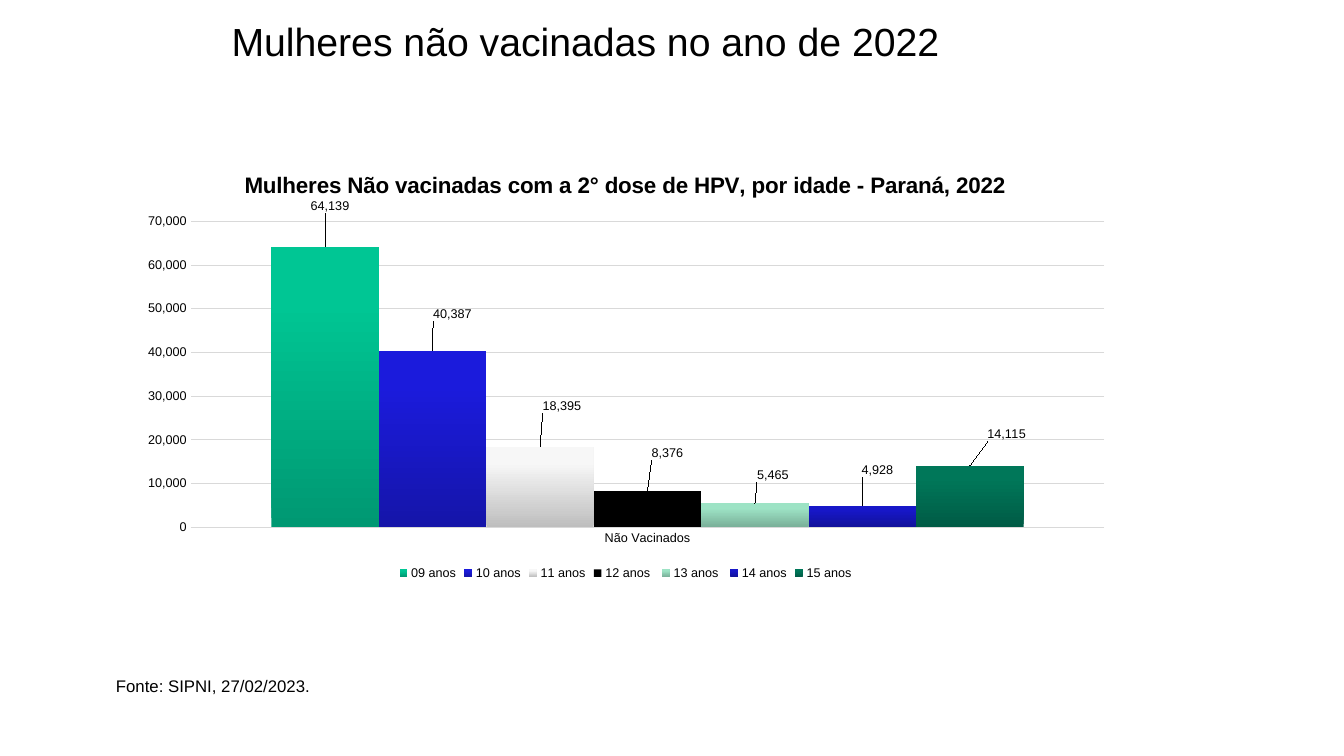
"""Slide with a column chart of women not vaccinated in 2022, by age."""
from lxml import etree
from pptx import Presentation
from pptx.chart.data import CategoryChartData
from pptx.dml.color import RGBColor
from pptx.enum import chart as ch, text as tx
from pptx.oxml import parse_xml
from pptx.oxml.ns import qn
from pptx.util import Inches, Pt

BLACK = RGBColor(0, 0, 0)
GRID = RGBColor(0xD9, 0xD9, 0xD9)
NO_LEAD = (
    '<c:extLst xmlns:c="http://schemas.openxmlformats.org/drawingml/2006/chart">'
    '<c:ext uri="{CE6537A1-D6FC-4f65-9D91-7224C49458BB}" '
    'xmlns:c15="http://schemas.microsoft.com/office/drawing/2012/chart">'
    '<c15:showLeaderLines val="0"/></c:ext></c:extLst>')
AGES = [
    ("09 anos", 64139, "009872", "00C694", 0.005, -0.068),
    ("10 anos", 40387, "1515A9", "1B1BDC", 0.02, -0.058),
    ("11 anos", 18395, "BEBEBE", "F7F7F7", 0.022, -0.068),
    ("12 anos ", 8376, "000000", None, 0.02, -0.06),
    ("13 anos ", 5465, "79AF98", "9DE3C5", 0.018, -0.04),
    ("14 anos", 4928, "12129A", "1717C8", 0.015, -0.056),
    ("15 anos", 14115, "005B45", "007759", 0.037, -0.046),
]


def write(words, box, size, align, anchor):
    shape = slide.shapes.add_textbox(*[Inches(n) for n in box])
    frame = shape.text_frame
    frame.word_wrap = True
    frame.vertical_anchor = anchor
    frame.margin_left = frame.margin_right = 0
    frame.margin_top = frame.margin_bottom = 0
    para = frame.paragraphs[0]
    para.text = words
    para.alignment = align
    para.line_spacing = 0.9
    font = para.runs[0].font
    font.name, font.size = "Arial", Pt(size)
    font.color.rgb = BLACK


def place(prior, **parts):
    old = prior.getnext()
    if old is not None and old.tag == qn("c:layout"):
        old.getparent().remove(old)
    layout = etree.Element(qn("c:layout"))
    manual = etree.SubElement(layout, qn("c:manualLayout"))
    for name, val in parts.items():
        etree.SubElement(manual, qn("c:" + name)).set("val", str(val))
    prior.addnext(layout)


deck = Presentation()
deck.slide_width, deck.slide_height = Inches(13.33), Inches(7.5)
slide = deck.slides.add_slide(deck.slide_layouts[6])

write("Mulheres não vacinadas no ano de 2022", (-0.03, 0.22, 11.67, 0.52),
      size=28, align=tx.PP_ALIGN.CENTER, anchor=tx.MSO_ANCHOR.TOP)
write("Fonte: SIPNI, 27/02/2023.", (1.15, 6.58, 4.17, 0.33),
      size=12, align=tx.PP_ALIGN.JUSTIFY, anchor=tx.MSO_ANCHOR.BOTTOM)

data = CategoryChartData(number_format="#,##0")
data.categories = ["Não Vacinados"]
for age in AGES:
    data.add_series(age[0], [age[1]])
chart = slide.shapes.add_chart(
    ch.XL_CHART_TYPE.COLUMN_CLUSTERED, Inches(1.27), Inches(1.53),
    Inches(9.87), Inches(4.27), data).chart
chart.font.name, chart.font.size = "Arial", Pt(9)
chart.font.color.rgb = BLACK

chart.has_title = True
title = chart.chart_title.text_frame
title.text = "Mulheres Não vacinadas com a 2° dose de HPV, por idade - Paraná, 2022"
font = title.paragraphs[0].runs[0].font
font.name, font.size, font.bold = "Arial", Pt(16), True
font.color.rgb = BLACK
root = chart.chart_title._element
place(root.find(qn("c:tx")), xMode="edge", yMode="edge", x=0.113, y=0.03)

chart.has_legend = True
chart.legend.position = ch.XL_LEGEND_POSITION.BOTTOM
chart.legend.include_in_layout = False

cat, val = chart.category_axis, chart.value_axis
for axis in (cat, val):
    axis.major_tick_mark = axis.minor_tick_mark = ch.XL_TICK_MARK.NONE
cat.format.line.color.rgb = GRID
cat.format.line.width = Pt(0.75)
val.format.line.fill.background()
val.minimum_scale, val.maximum_scale, val.major_unit = 0, 70000, 10000
val.tick_labels.number_format = "#,##0"
val.tick_labels.number_format_is_linked = False
val.major_gridlines.format.line.color.rgb = GRID
val.major_gridlines.format.line.width = Pt(0.75)

plot = chart.plots[0]
plot.gap_width, plot.overlap = 150, 0
plot.vary_by_categories = False
for bars, (name, count, dark, light, dx, dy) in zip(plot.series, AGES):
    fill = bars.format.fill
    if light:
        fill.gradient()
        fill.gradient_angle = 90
        for stop, tone, spot in zip(fill.gradient_stops, (dark, light), (0, 0.8)):
            stop.color.rgb = RGBColor.from_string(tone)
            stop.position = spot
    else:
        fill.solid()
        fill.fore_color.rgb = RGBColor.from_string(dark)
    labels = bars.data_labels
    labels.show_value = True
    labels.number_format, labels.number_format_is_linked = "#,##0", False
    label = bars.points[0].data_label
    label.font.name, label.font.size = "Arial", Pt(9)
    label.font.color.rgb = BLACK
    label.position = ch.XL_LABEL_POSITION.OUTSIDE_END
    group = labels._element
    place(group.find(qn("c:dLbl")).find(qn("c:idx")), x=dx, y=dy)
    for lead in group.findall(qn("c:showLeaderLines")):
        group.remove(lead)
    group.append(parse_xml(NO_LEAD))

area = chart._chartSpace.chart.plotArea
for old in area.findall(qn("c:layout")):
    area.remove(old)
mark = etree.Element(qn("c:layout"))
area.insert(0, mark)
place(mark, layoutTarget="inner", xMode="edge", yMode="edge",
      x=0.063, y=0.156, w=0.918, h=0.711)
area.remove(mark)

deck.save("out.pptx")
